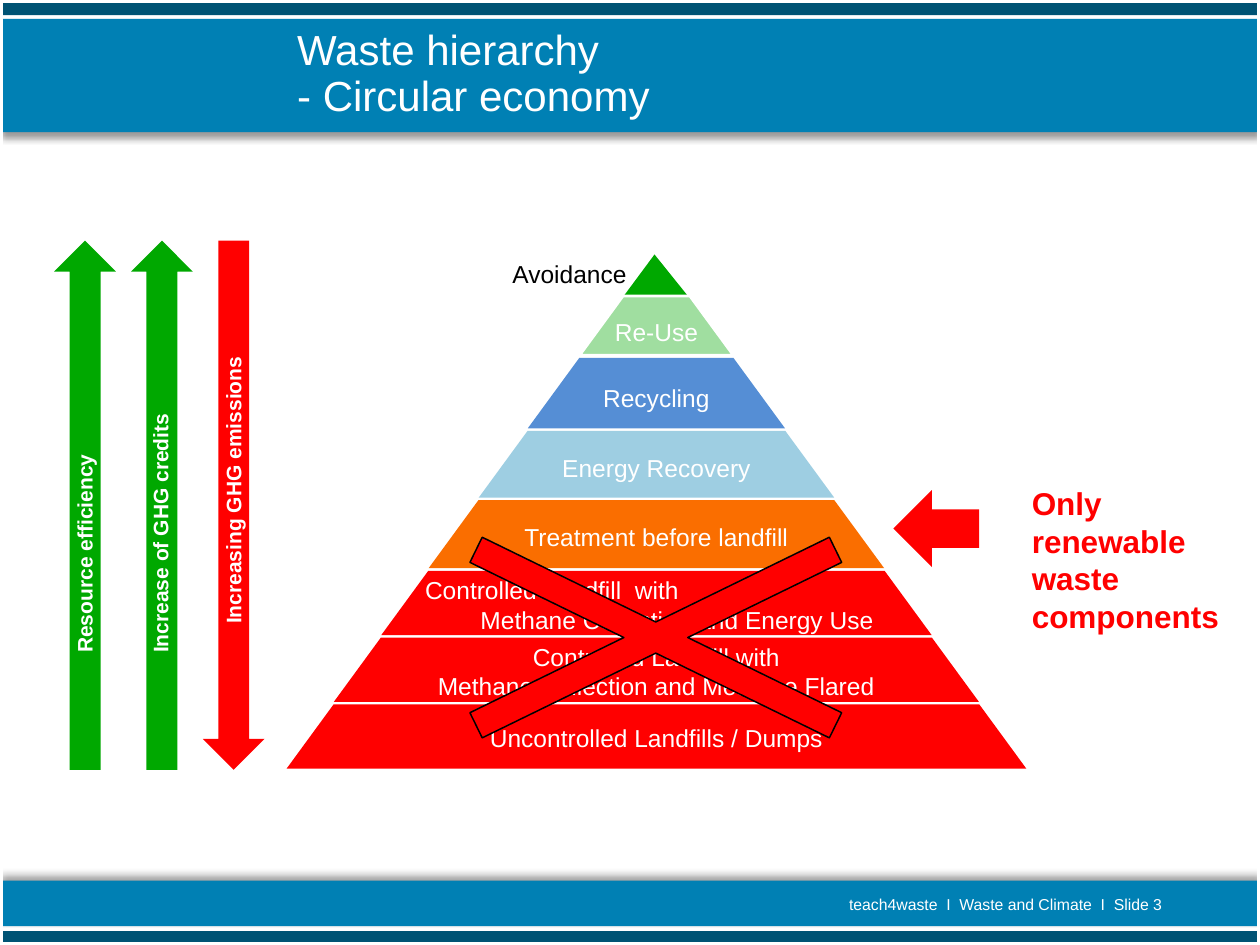
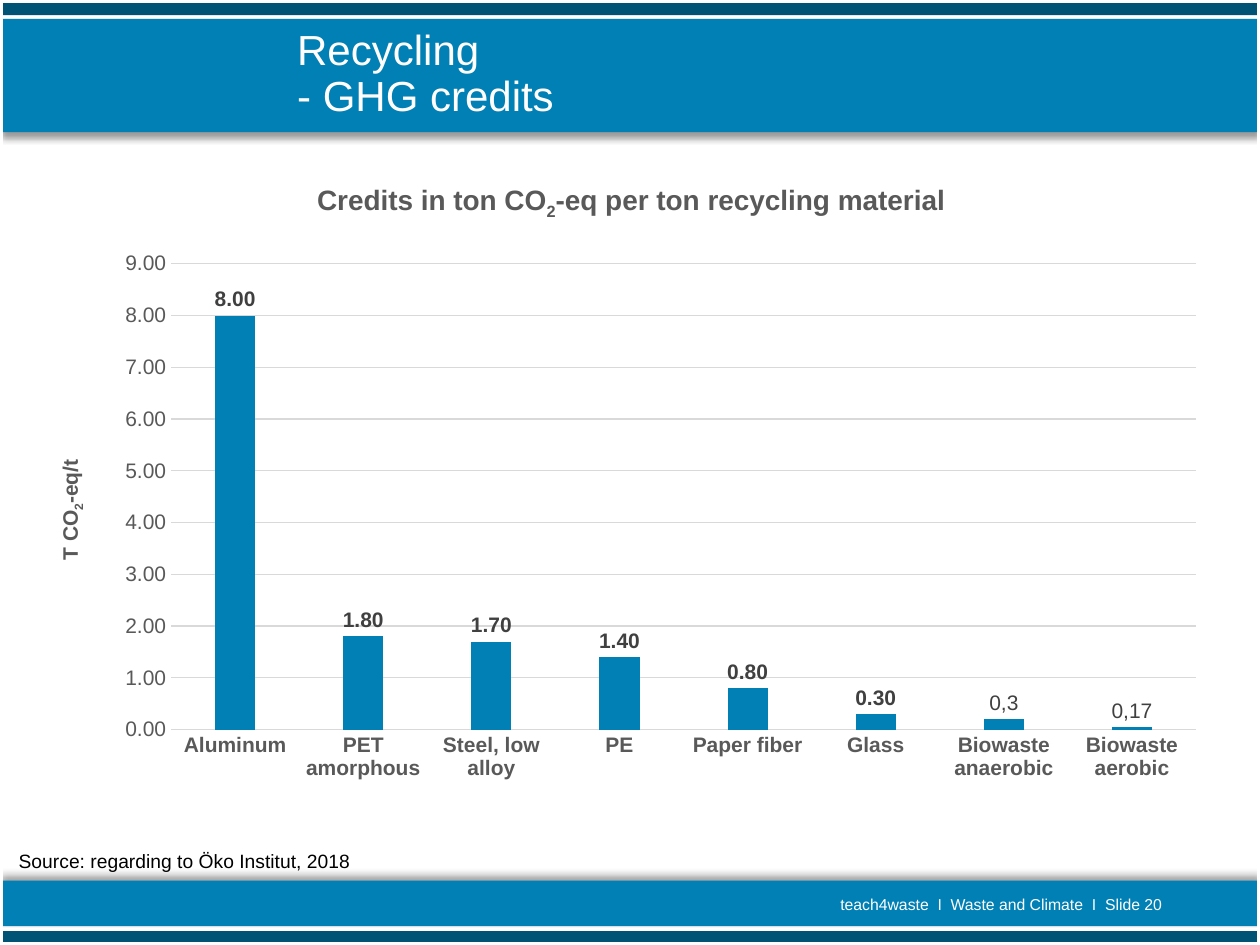
from lxml import etree
from pptx import Presentation
from pptx.chart.data import CategoryChartData
from pptx.dml.color import RGBColor
from pptx.enum.chart import XL_CHART_TYPE as CT, XL_LABEL_POSITION as LP, XL_TICK_MARK as TM
from pptx.enum.shapes import MSO_SHAPE as S
from pptx.enum.text import MSO_ANCHOR as ANC, PP_ALIGN as AL
from pptx.oxml import parse_xml
from pptx.oxml.ns import nsdecls, qn
from pptx.util import Emu, Inches, Pt

# Shared look
W, H = 10, 7.5
FONT = "Arial"
C = {"white": "FFFFFF", "black": "000000", "navy": "005374", "blue": "0080B4",
     "red": "FF0000", "green": "00A800", "lime": "4CC24C", "steel": "558ED5",
     "sky": "4CA6CA", "orange": "FA6E00", "grey": "595959", "dark": "404040",
     "grid": "D9D9D9"}
BANDS = [  # top, height, colour, shadow direction in degrees
    (0, 0.12, "navy", None), (0.15, 0.9, "blue", 90),
    (6.99, 0.36, "blue", 270), (7.39, 0.12, "navy", None)]
FOOTER = "teach4waste  I  Waste and Climate  I  Slide {}"

# Slide 1 content
HIERARCHY_TITLE = ["Waste hierarchy", "- Circular economy"]
TIERS = [  # top, lines, colour, opacity in percent
    (2.35, ["Re-Use"], "lime", 53),
    (2.84, ["Recycling"], "steel", 100),
    (3.42, ["Energy Recovery"], "sky", 54),
    (3.97, ["Treatment before landfill"], "orange", 100),
    (4.53, ["Controlled Landfill  with", "Methane Collection and Energy Use"], "red", 100),
    (5.06, ["Controlled Landfill with", "Methane Collection and Methane Flared"], "red", 100),
    (5.59, ["Uncontrolled Landfills / Dumps"], "red", 100)]
STAGGERED_TIER, STAGGER = 4, 0.44
CENTRE, APEX, BASE, SLOPE, GAP = 5.21, 1.96, 6.12, 0.709, 0.02
ARROWS = [  # left, colour, rotation, label, label centre (x, y), label length
    (1.61, "red", 0, "Increasing GHG emissions", (1.85, 3.67), 2.76),
    (1.04, "green", 180, "Increase of GHG credits", (1.27, 3.53), 3.5),
    (0.43, "green", 180, "Resource efficiency", (0.67, 4.08), 2.4)]

# Slide 2 content
CREDITS_TITLE = ["Recycling", "- GHG credits"]
HEADING = [("Credits in ton CO", 0), ("2", -25), ("-eq per ton recycling material", 0)]
AXIS_TITLE = [("T CO", 0), ("2", -25), ("-eq/t", 0)]
SOURCE = "Source: regarding to Öko Institut, 2018"
CREDITS = [("Aluminum", 8), ("PET amorphous", 1.8), ("Steel, low alloy", 1.7),
           ("PE", 1.4), ("Paper fiber", 0.8), ("Glass", 0.3),
           ("Biowaste anaerobic", 0.2), ("Biowaste aerobic", 0.05)]
OWN_LABELS = {6: "0,3", 7: "0,17"}


def rgb(name):
    return RGBColor.from_string(C[name])


def style(font, size, color, bold=False):
    font.name, font.size, font.bold = FONT, Pt(size), bold
    font.color.rgb = rgb(color)


def add_run(p, text, size, color, bold=False, base=0):
    r = p.add_run()
    r.text = text
    style(r.font, size, color, bold)
    if base:
        r._r.get_or_add_rPr().set("baseline", str(base * 1000))


def write(tf, lines, size, color, bold=False, align=AL.LEFT):
    """One paragraph per line; a line is a string or a list of (text, baseline)."""
    for i, line in enumerate(lines):
        p = tf.paragraphs[0] if i == 0 else tf.add_paragraph()
        p.alignment = align
        for text, base in [(line, 0)] if isinstance(line, str) else line:
            add_run(p, text, size, color, bold, base)


def text_box(slide, box, lines, size, color, bold=False, align=AL.LEFT,
             anchor=ANC.TOP, wrap=True):
    sp = slide.shapes.add_textbox(*map(Inches, box))
    tf = sp.text_frame
    tf.word_wrap, tf.vertical_anchor = wrap, anchor
    write(tf, lines, size, color, bold, align)
    return sp


def shape(slide, kind, box, fill=None, line=None, width=1, alpha=100, adj=None):
    sp = slide.shapes.add_shape(kind, *map(Inches, box))
    sp.shadow.inherit = False
    if fill:
        sp.fill.solid()
        sp.fill.fore_color.rgb = rgb(fill)
        if alpha < 100:
            clr = sp._element.spPr.find(qn("a:solidFill"))[0]
            etree.SubElement(clr, qn("a:alpha")).set("val", str(alpha * 1000))
    else:
        sp.fill.background()
    if line:
        sp.line.color.rgb, sp.line.width = rgb(line), Pt(width)
    else:
        sp.line.fill.background()
    if adj is not None:
        sp.adjustments[0] = adj
    return sp


def cast_shadow(sp, degrees):
    effects = sp._element.spPr.find(qn("a:effectLst"))
    effects.append(parse_xml(
        f'<a:outerShdw {nsdecls("a")} blurRad="{Pt(4)}" dist="{Pt(3)}" '
        f'dir="{degrees * 60000}" rotWithShape="0"><a:srgbClr val="{C["black"]}">'
        '<a:alpha val="40000"/></a:srgbClr></a:outerShdw>'))


def new_slide(prs, title, number):
    slide = prs.slides.add_slide(prs.slide_layouts[6])
    for top, height, color, shadow in BANDS:
        band = shape(slide, S.RECTANGLE, (0, top, W, height), color)
        if shadow is not None:
            cast_shadow(band, shadow)
    shape(slide, S.RECTANGLE, (0, 0, W, H), line="white", width=3)
    text_box(slide, (0.68, 7.07, 8.64, 0.21), [FOOTER.format(number)], 9, "white",
             align=AL.RIGHT, anchor=ANC.MIDDLE)
    # Title: two lines in one indented paragraph
    sp = text_box(slide, (0.69, 0.15, 7.4, 0.89), title[:1], 24, "white", anchor=ANC.MIDDLE)
    p = sp.text_frame.paragraphs[0]
    p._p.get_or_add_pPr().set("marL", str(Inches(1.57)))
    p.line_spacing = 0.9
    p.add_line_break()
    add_run(p, title[1], 24, "white")
    return slide


def hierarchy_slide(prs):
    slide = new_slide(prs, HIERARCHY_TITLE, 3)

    # Pyramid
    shape(slide, S.ISOSCELES_TRIANGLE, (4.95, 2.02, 0.51, 0.33), "green", adj=0.48)
    bottoms = [tier[0] for tier in TIERS[1:]] + [BASE]
    for i, ((top, lines, color, alpha), below) in enumerate(zip(TIERS, bottoms)):
        bottom = below - GAP
        half = SLOPE * (bottom - APEX)
        sp = shape(slide, S.TRAPEZOID, (CENTRE - half, top, 2 * half, bottom - top), color,
                   line="white" if i == 0 else None, width=1.5, alpha=alpha, adj=0.732)
        tf = sp.text_frame
        tf.word_wrap, tf.vertical_anchor = True, ANC.MIDDLE
        if i == 0:
            tf.margin_left = tf.margin_right = tf.margin_top = tf.margin_bottom = 0
        staggered = i == STAGGERED_TIER
        write(tf, lines, 14, "white", align=AL.LEFT if staggered else AL.CENTER)
        if staggered:
            tf.paragraphs[1]._p.get_or_add_pPr().set("marL", str(Inches(STAGGER)))
    tip = shape(slide, S.TRAPEZOID, (2.75, 1.92, 3.54, 0.47), adj=0.732)
    tip.text_frame.vertical_anchor = ANC.MIDDLE
    write(tip.text_frame, ["Avoidance"], 14, "black", align=AL.CENTER)

    # Trend arrows with upright labels
    for left, color, turn, label, (x, y), length in ARROWS:
        shape(slide, S.DOWN_ARROW, (left, 1.91, 0.49, 4.2), color).rotation = turn
        text_box(slide, (x - length / 2, y - 0.15, length, 0.3), [label], 12, "white",
                 bold=True).rotation = 270

    # Crossed-out landfills and the remark
    shape(slide, S.LEFT_ARROW, (7.09, 3.89, 0.68, 0.61), "red")
    shape(slide, S.MATH_MULTIPLY, (2.46, 3.72, 5.49, 2.68), "red", "black", 0.85, adj=0.083)
    text_box(slide, (8.09, 3.79, 1.91, 1.31), ["Only renewable waste components"], 18,
             "red", bold=True)


def place(parent, index, inner=False, **shares):
    """Give a chart part a fixed place, as shares of the chart's size."""
    for old in parent.findall(qn("c:layout")):
        parent.remove(old)
    target = '<c:layoutTarget val="inner"/>' if inner else ""
    modes = '<c:xMode val="edge"/><c:yMode val="edge"/>'
    values = "".join(f'<c:{k} val="{v}"/>' for k, v in shares.items())
    parent.insert(index, parse_xml(
        f'<c:layout {nsdecls("c")}><c:manualLayout>{target}{modes}{values}'
        '</c:manualLayout></c:layout>'))


def credits_slide(prs):
    slide = new_slide(prs, CREDITS_TITLE, 20)
    text_box(slide, (0.05, 6.69, 2.84, 0.29), [SOURCE], 11, "black", wrap=False)
    text_box(slide, (1.58, 1.4, 6.86, 0.37), [HEADING], 16, "grey", bold=True,
             align=AL.CENTER)

    # Column chart
    data = CategoryChartData(number_format="0.00")
    data.categories = [name for name, _ in CREDITS]
    data.add_series("Series 1", [value for _, value in CREDITS])
    chart = slide.shapes.add_chart(
        CT.COLUMN_CLUSTERED, *map(Inches, (0.33, 1.92, 9.35, 4.35)), data).chart
    chart.has_legend = chart.has_title = False
    style(chart.font, 12, "grey")
    plot = chart.plots[0]
    plot.gap_width, plot.overlap, plot.vary_by_categories = 219, -27, False
    series = plot.series[0]
    series.format.fill.solid()
    series.format.fill.fore_color.rgb = rgb("blue")

    # Value labels
    labels = series.data_labels
    labels.show_value, labels.position = True, LP.OUTSIDE_END
    labels.number_format, labels.number_format_is_linked = "0.00", False
    style(labels.font, 12, "dark", True)
    for i, text in OWN_LABELS.items():
        label = series.points[i].data_label
        write(label.text_frame, [text], 12, "dark", align=AL.CENTER)
        label.position = LP.OUTSIDE_END

    # Axes
    cat, val = chart.category_axis, chart.value_axis
    for axis, bold in ((cat, True), (val, False)):
        axis.major_tick_mark = axis.minor_tick_mark = TM.NONE
        style(axis.tick_labels.font, 12, "grey", bold)
    val.minimum_scale, val.maximum_scale, val.major_unit = 0, 9, 1
    val.tick_labels.number_format = "0.00"
    val.tick_labels.number_format_is_linked = False
    val.format.line.fill.background()
    val.has_major_gridlines = True
    for line in (cat.format.line, val.major_gridlines.format.line):
        line.color.rgb, line.width = rgb("grid"), Pt(0.75)
    title = val.axis_title
    write(title.text_frame, [AXIS_TITLE], 12, "grey", True, AL.CENTER)
    body = title.text_frame._txBody.find(qn("a:bodyPr"))
    body.set("rot", "-5400000")
    body.set("vert", "horz")
    place(title._element, 1, x=0.01, y=0.39)
    place(chart._chartSpace.chart.plotArea, 0, inner=True, x=0.11, y=0.04, w=0.87, h=0.85)


def main():
    prs = Presentation()
    prs.slide_width, prs.slide_height = Inches(W), Inches(H)
    hierarchy_slide(prs)
    credits_slide(prs)
    prs.save("out.pptx")


if __name__ == "__main__":
    main()
